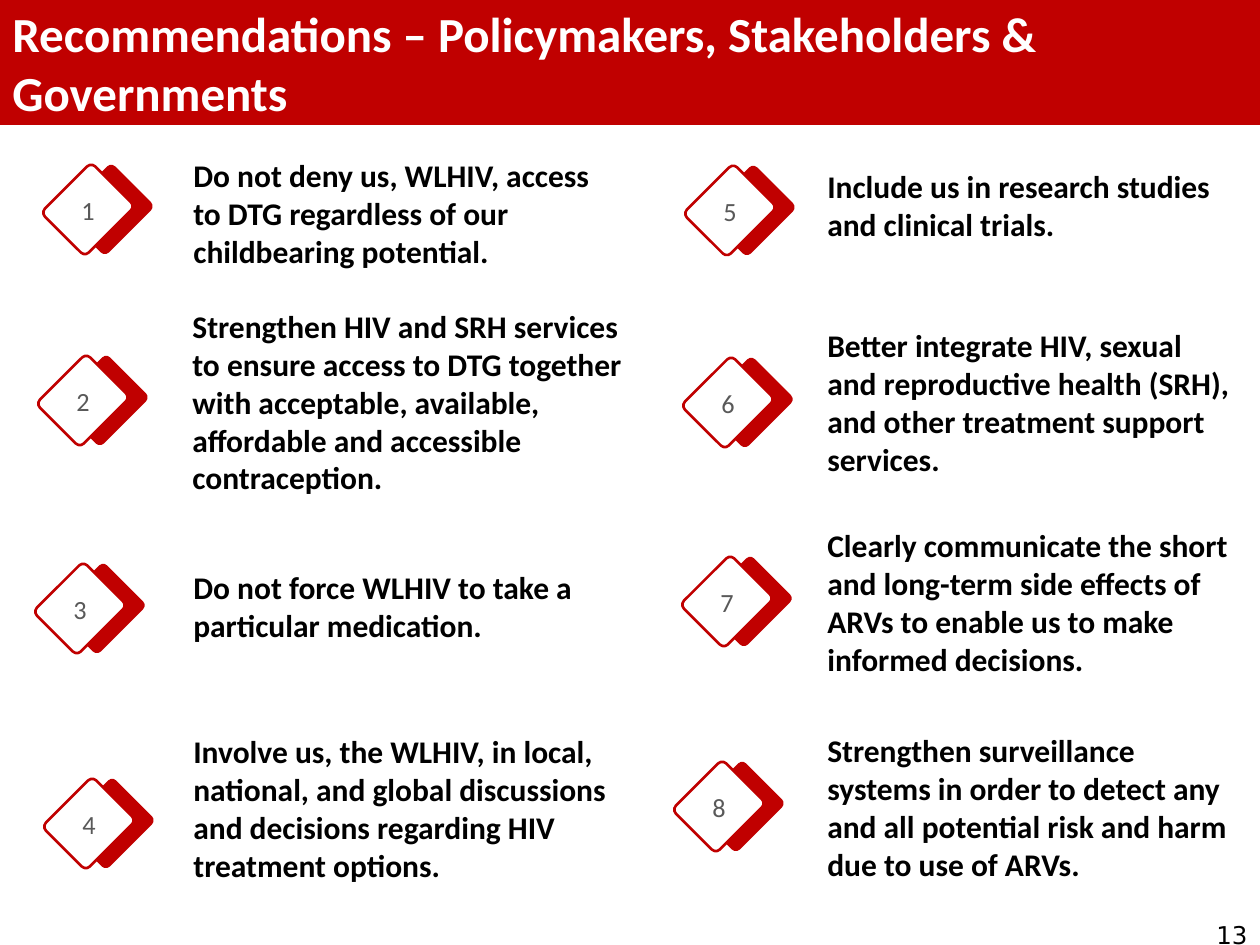
"""Build the recommendations slide: a title band and eight numbered points in two columns."""
from pptx import Presentation
from pptx.dml.color import RGBColor
from pptx.enum.shapes import MSO_SHAPE
from pptx.enum.text import MSO_ANCHOR, PP_ALIGN
from pptx.util import Emu, Pt

RECTANGLE, ROUNDED = MSO_SHAPE.RECTANGLE, MSO_SHAPE.ROUNDED_RECTANGLE
TOP, MIDDLE = MSO_ANCHOR.TOP, MSO_ANCHOR.MIDDLE
LEFT, CENTER, RIGHT = PP_ALIGN.LEFT, PP_ALIGN.CENTER, PP_ALIGN.RIGHT

PX = 914400 / 126
RED, WHITE, BLACK, GRAY = "C00000", "FFFFFF", "000000", "595959"

TITLE = "Recommendations – Policymakers, Stakeholders & Governments"
PAGE_NUMBER = "13"
# Each point: text, marker (left, top), text box (left, top, width, height)
POINTS = [
    ("Do not deny us, WLHIV, access to DTG regardless of our childbearing potential.",
     (57, 174), (181, 150, 454, 127)),
    ("Strengthen HIV and SRH services to ensure access to DTG together with acceptable, "
     "available, affordable and accessible contraception.",
     (52, 365), (180, 301, 457, 204)),
    ("Do not force WLHIV to take a particular medication.",
     (49, 573), (181, 562, 415, 89)),
    ("Involve us, the WLHIV, in local, national, and global discussions and decisions "
     "regarding HIV treatment options.",
     (58, 788), (181, 726, 452, 165)),
    ("Include us in research studies and clinical trials.",
     (699, 175), (815, 161, 430, 89)),
    ("Better integrate HIV, sexual and reproductive health (SRH), and other treatment "
     "support services.",
     (697, 367), (815, 320, 430, 165)),
    ("Clearly communicate the short and long-term side effects of ARVs to enable us to make "
     "informed decisions.",
     (696, 566), (815, 520, 430, 165)),
    ("Strengthen surveillance systems in order to detect any and all potential risk and harm "
     "due to use of ARVs.",
     (688, 771), (815, 725, 430, 165)),
]
DIAMOND_WIDTH, DIAMOND_HEIGHT, DIAMOND_SHIFT = 62, 71, 20
LABEL_LEFT, LABEL_TOP, LABEL_WIDTH, LABEL_HEIGHT = 4, 14, 54, 44


def px(*lengths):
    return [Emu(round(length * PX)) for length in lengths]


def color(value):
    return RGBColor.from_string(value)


def write(box, text, size=18, ink=BLACK, bold=False, font="Calibri", align=LEFT, anchor=TOP):
    frame = box.text_frame
    frame.word_wrap = True
    frame.vertical_anchor = anchor
    para = frame.paragraphs[0]
    para.alignment = align
    span = para.add_run()
    span.text = text
    span.font.name, span.font.size, span.font.bold = font, Pt(size), bold
    span.font.color.rgb = color(ink)


def add_text(shapes, place, text, **style):
    write(shapes.add_textbox(*px(*place)), text, **style)


def add_block(shapes, kind, place, fill, line=None):
    block = shapes.add_shape(kind, *px(*place))
    block.shadow.inherit = False
    block.fill.solid()
    block.fill.fore_color.rgb = color(fill)
    if line:
        block.line.color.rgb = color(line)
        block.line.width = Pt(1.5)
    else:
        block.line.fill.background()
    return block


def add_marker(shapes, number, left, top):
    group = shapes.add_group_shape()
    for shift, fill, line in ((DIAMOND_SHIFT, RED, None), (0, WHITE, RED)):
        place = (left + shift, top, DIAMOND_WIDTH, DIAMOND_HEIGHT)
        diamond = add_block(group.shapes, ROUNDED, place, fill, line)
        diamond.adjustments[0] = 0.09
        diamond.rotation = 45
    place = (left + LABEL_LEFT, top + LABEL_TOP, LABEL_WIDTH, LABEL_HEIGHT)
    add_text(group.shapes, place, str(number), size=15, ink=GRAY, align=CENTER)


def main():
    deck = Presentation()
    deck.slide_width, deck.slide_height = px(1260, 945)
    shapes = deck.slides.add_slide(deck.slide_layouts[6]).shapes

    band = add_block(shapes, RECTANGLE, (0, 0, 1260, 125), RED)
    write(band, TITLE, size=28, ink=WHITE, bold=True, anchor=MIDDLE)
    add_text(shapes, (1134, 914, 126, 35), PAGE_NUMBER, size=14, font="DejaVu Sans", align=RIGHT)
    for number, (text, marker, place) in enumerate(POINTS, 1):
        add_marker(shapes, number, *marker)
        add_text(shapes, place, text, bold=True)

    deck.save("out.pptx")


if __name__ == "__main__":
    main()
